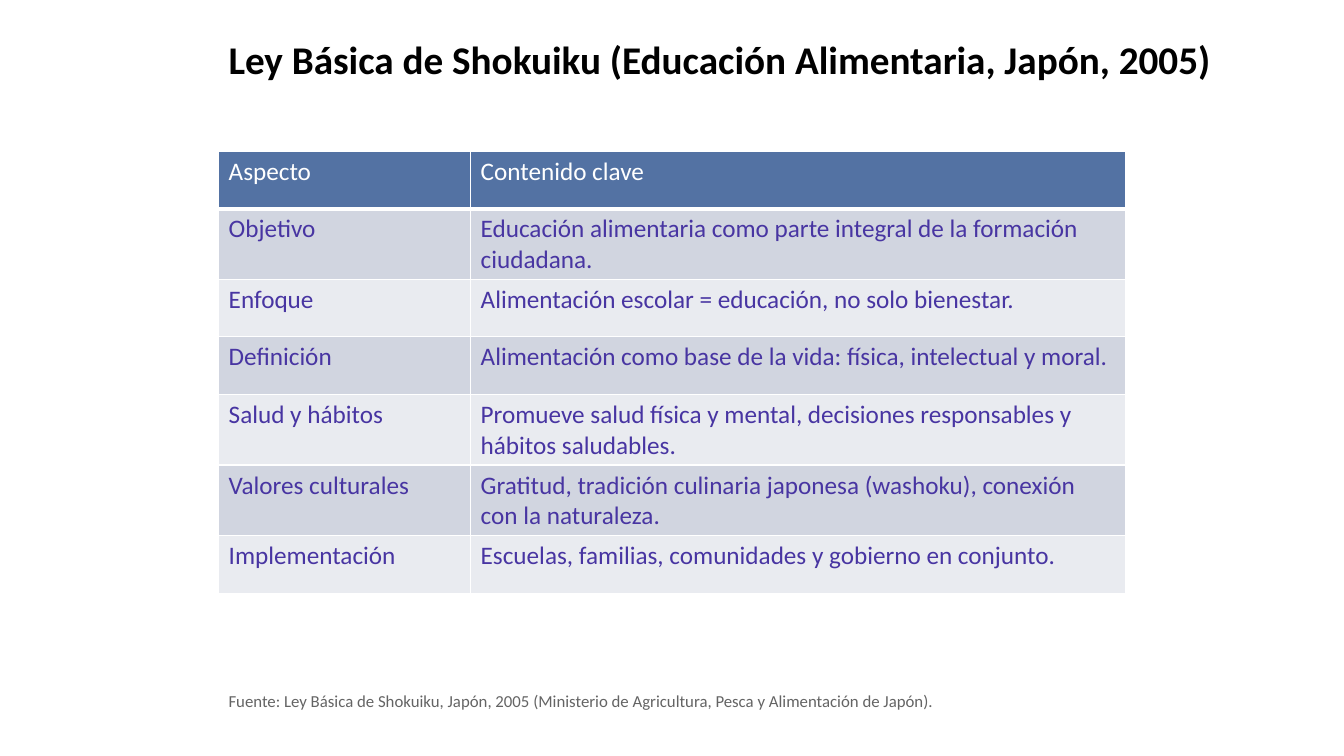
from lxml.etree import SubElement
from pptx import Presentation
from pptx.dml.color import RGBColor as RGB
from pptx.enum.text import MSO_AUTO_SIZE as AutoSize
from pptx.oxml.ns import qn
from pptx.util import Cm, Pt

COLORS = {
    "title": "000000", "source": "646464", "border": "FFFFFF",
    "header": "5372A3", "header_text": "FFFFFF", "body_text": "4835A2",
    "odd_row": "D1D5E0", "even_row": "E9EBF0",
}
LEFT = Cm(5.51)


def style_text(paragraph, size, color, bold=False):
    font = paragraph.runs[0].font
    font.name, font.size, font.bold = "Calibri", Pt(size), bold
    font.color.rgb = RGB.from_string(COLORS[color])


def add_border(cell, side, points):
    line = SubElement(cell._tc.get_or_add_tcPr(), qn(f"a:ln{side}"), w=str(Pt(points)))
    fill = SubElement(line, qn("a:solidFill"))
    SubElement(fill, qn("a:srgbClr"), val=COLORS["border"])


prs = Presentation()
prs.slide_width, prs.slide_height = Cm(33.87), Cm(19.05)
slide = prs.slides.add_slide(prs.slide_layouts[6])

# Title and source line
captions = [
    ("Ley Básica de Shokuiku (Educación Alimentaria, Japón, 2005)",
     0.76, 25.55, 1.45, 28, "title", True),
    ("Fuente: Ley Básica de Shokuiku, Japón, 2005 "
     "(Ministerio de Agricultura, Pesca y Alimentación de Japón).",
     17.27, 18.49, 0.77, 12, "source", False),
]
for wording, top, width, height, size, color, bold in captions:
    frame = slide.shapes.add_textbox(LEFT, Cm(top), Cm(width), Cm(height)).text_frame
    frame.word_wrap = False
    frame.auto_size = AutoSize.SHAPE_TO_FIT_TEXT
    frame.text = wording
    style_text(frame.paragraphs[0], size, color, bold)

# Table of key contents
aspects = [
    ("Aspecto", "Contenido clave"),
    ("Objetivo", "Educación alimentaria como parte integral de la formación ciudadana."),
    ("Enfoque", "Alimentación escolar = educación, no solo bienestar."),
    ("Definición", "Alimentación como base de la vida: física, intelectual y moral."),
    ("Salud y hábitos",
     "Promueve salud física y mental, decisiones responsables y hábitos saludables."),
    ("Valores culturales",
     "Gratitud, tradición culinaria japonesa (washoku), conexión con la naturaleza."),
    ("Implementación", "Escuelas, familias, comunidades y gobierno en conjunto."),
]
row_height = Cm(1.45)
law_table = slide.shapes.add_table(
    len(aspects), 2, LEFT, Cm(3.81), Cm(22.86), row_height * len(aspects)).table
law_table.columns[0].width = Cm(6.35)
law_table.columns[1].width = Cm(16.51)

for row, entry in enumerate(aspects):
    law_table.rows[row].height = row_height
    is_header = row == 0
    band = "header" if is_header else "odd_row" if row % 2 else "even_row"
    for column, wording in enumerate(entry):
        cell = law_table.cell(row, column)
        for side in "LRTB":
            add_border(cell, side, 3 if is_header and side == "B" else 1)
        cell.fill.solid()
        cell.fill.fore_color.rgb = RGB.from_string(COLORS[band])
        cell.text_frame.text = wording
        style_text(cell.text_frame.paragraphs[0], 18,
                   "header_text" if is_header else "body_text")

prs.save("out.pptx")
